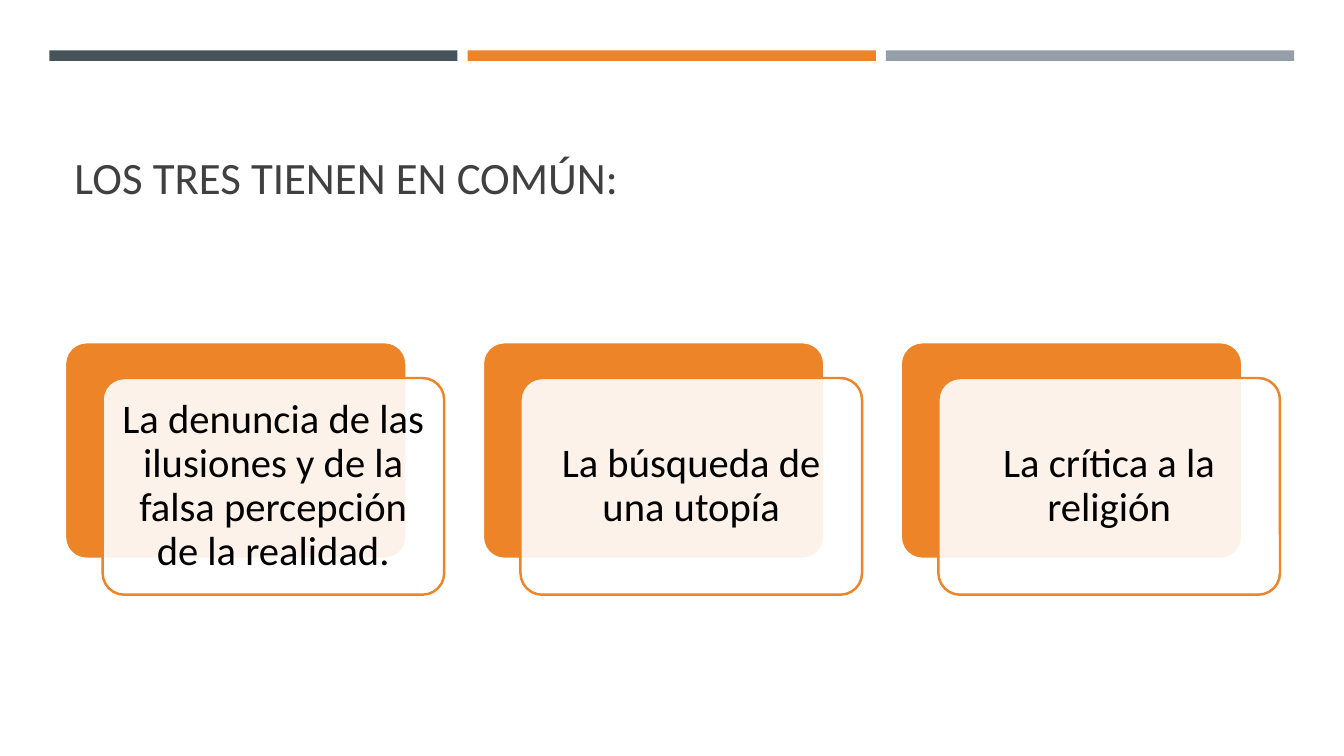
from lxml.etree import SubElement
from pptx import Presentation
from pptx.dml.color import RGBColor
from pptx.enum.shapes import MSO_SHAPE
from pptx.enum.text import MSO_ANCHOR, PP_ALIGN
from pptx.oxml.ns import qn
from pptx.util import Pt

SLATE = RGBColor(0x46, 0x53, 0x59)
ORANGE = RGBColor(0xED, 0x84, 0x28)
GRAY = RGBColor(0x96, 0x9F, 0xA7)
WHITE = RGBColor(0xFF, 0xFF, 0xFF)
BLACK = RGBColor(0, 0, 0)
TITLE_COLOR = RGBColor(0x40, 0x40, 0x40)
FONT = "Calibri"

CARD_W, CARD_H = 244, 154.8
CARD_PITCH = 298.5
BAR_PITCH = 298.8


def add_box(s, kind, x, y, w, h, fill, line=None):
    sp = s.shapes.add_shape(kind, Pt(x), Pt(y), Pt(w), Pt(h))
    sp.shadow.inherit = False
    sp.fill.solid()
    sp.fill.fore_color.rgb = fill
    if line is None:
        sp.line.fill.background()
    else:
        sp.line.color.rgb = line
        sp.line.width = Pt(1.75)
        sp.adjustments[0] = 0.1
    return sp


def format_text(p, size, color):
    for r in p.runs:
        r.font.name = FONT
        r.font.size = Pt(size)
        r.font.color.rgb = color


prs = Presentation()
prs.slide_width, prs.slide_height = Pt(960), Pt(540)
s = prs.slides.add_slide(prs.slide_layouts[5])

for i, color in enumerate([SLATE, ORANGE, GRAY]):
    add_box(s, MSO_SHAPE.RECTANGLE, 35.2 + i * BAR_PITCH, 36, 291.6, 7.5, color)

title = s.shapes.title
title.left, title.top, title.width, title.height = Pt(46), Pt(55.5), Pt(868), Pt(93.5)
tf = title.text_frame
tf.text = "LOS TRES TIENEN EN COMÚN:"
tf.word_wrap = True
tf.vertical_anchor = MSO_ANCHOR.BOTTOM
tf.paragraphs[0].alignment = PP_ALIGN.LEFT
format_text(tf.paragraphs[0], 32, TITLE_COLOR)

ideas = [
    "La denuncia de las ilusiones y de la falsa percepción de la realidad.",
    "La búsqueda de una utopía",
    "La crítica a la religión",
]
for i, idea in enumerate(ideas):
    x = 46.4 + i * CARD_PITCH
    add_box(s, MSO_SHAPE.ROUNDED_RECTANGLE, x, 244.4, CARD_W, CARD_H, ORANGE, WHITE)
    card = add_box(s, MSO_SHAPE.ROUNDED_RECTANGLE, x + 26.9, 270, CARD_W, CARD_H, WHITE, ORANGE)
    color_xml = card.fill._xPr.find(qn("a:solidFill"))[0]
    SubElement(color_xml, qn("a:alpha")).set("val", "90000")
    tf = card.text_frame
    tf.text = idea
    tf.word_wrap = True
    tf.vertical_anchor = MSO_ANCHOR.MIDDLE
    tf.margin_left = tf.margin_right = tf.margin_top = tf.margin_bottom = Pt(8.6)
    p = tf.paragraphs[0]
    p.alignment = PP_ALIGN.CENTER
    p.line_spacing = 0.9
    format_text(p, 29, BLACK)

prs.save("out.pptx")
